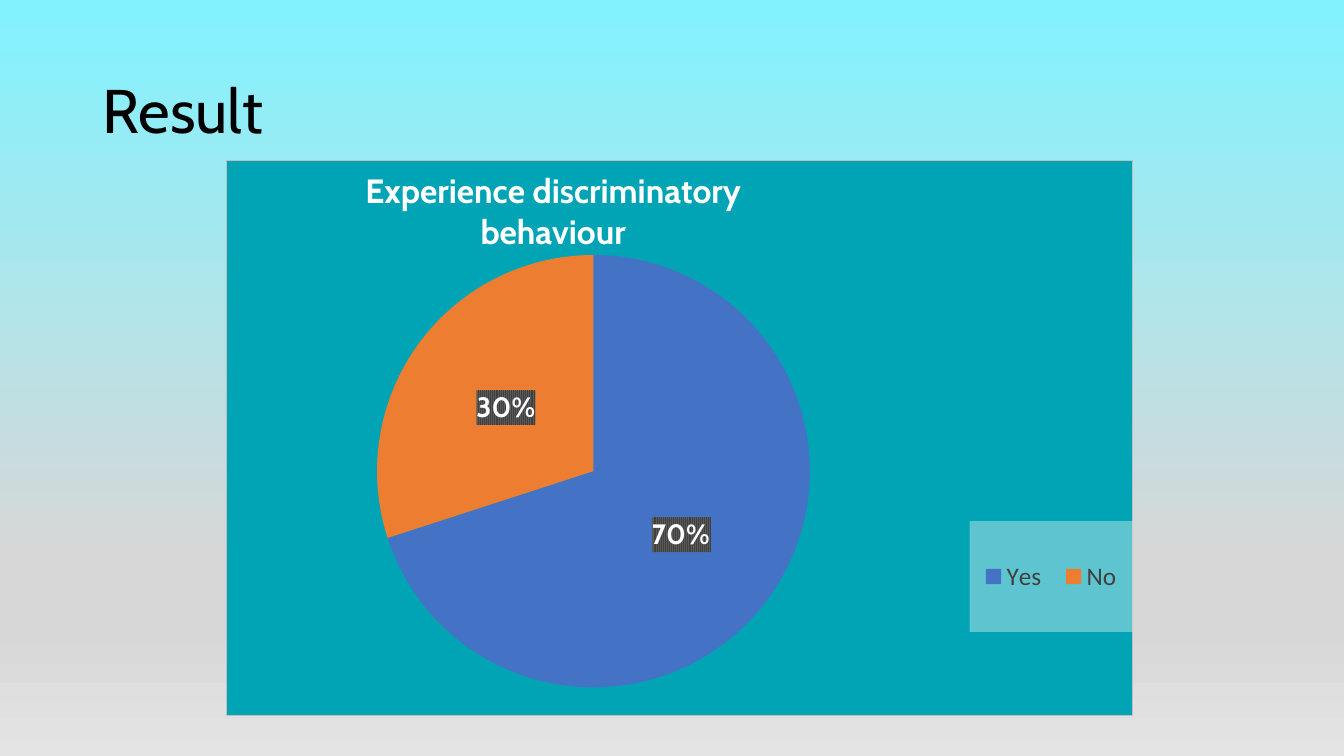
from lxml import etree
from pptx import Presentation
from pptx.chart.data import CategoryChartData
from pptx.dml.color import RGBColor
from pptx.enum import chart as kinds, dml, text
from pptx.oxml import parse_xml
from pptx.oxml.ns import nsdecls, qn
from pptx.util import Inches, Pt

# Content
HEADING = "Result"
CHART_TITLE = ["Experience discriminatory", "behaviour"]
ANSWERS = {"Yes": 70, "No": 30}

THEME = {
    "background": [(0, "81F3FF"), (74, "D7D7D7"), (83, "D7D7D7"), (100, "E4E4E4")],
    "slices": ["4472C4", "ED7D31"],
    "panel": "00A4B5", "border": "BFBFBF",
    "black": "000000", "white": "FFFFFF", "legend": "404040",
    "label_stripes": ("404040", "595959"),
    "display": "Cabin", "body": "Calibri",
    "heading_size": 44, "title_size": 24, "label_size": 20, "legend_size": 18, "base_size": 10,
}

# Places in inches; chart parts as fractions of the chart
HEADING_BOX = (0.92, 0.4, 11.5, 1.45)
CHART_BOX = (2.24, 1.59, 9, 5.51)
TITLE_AT = {"x": 0.15, "y": 0.01}
PLOT_AT = {"x": 0.01, "y": 0.17, "w": 0.79, "h": 0.78}
LEGEND_AT = {"x": 0.82, "y": 0.65, "w": 0.18, "h": 0.2}


def style(font, face, size, color, bold=False):
    font.name, font.size, font.bold = face, Pt(size), bold
    font.color.rgb = RGBColor.from_string(THEME[color])


def set_layout(parent, after, place, inner=False):
    """Give a chart part a manual place, following its child named by after."""
    for old in parent.findall(qn("c:layout")):
        parent.remove(old)
    target = '<c:layoutTarget val="inner"/>' if inner else ""
    modes = "".join(f'<c:{k}Mode val="edge"/>' for k in "xy")
    sizes = "".join(f'<c:{k} val="{v}"/>' for k, v in place.items())
    layout = parse_xml(f'<c:layout {nsdecls("c")}><c:manualLayout>{target}{modes}{sizes}'
                       '</c:manualLayout></c:layout>')
    parent.insert(parent.index(parent.find(qn(after))) + 1 if after else 0, layout)


def add_shape_style(parent, after, content):
    part = parse_xml(f'<c:spPr {nsdecls("c", "a")}>{content}</c:spPr>')
    parent.find(qn(after)).addnext(part)


def solid(color, extra=""):
    return f'<a:solidFill><a:srgbClr val="{color}">{extra}</a:srgbClr></a:solidFill>'


def paint_background(slide):
    fill = slide.background.fill
    fill.gradient()
    fill.gradient_angle = 270
    stops = slide.background._cSld.find(".//" + qn("a:gsLst"))
    for stop in list(stops):
        stops.remove(stop)
    for position, color in THEME["background"]:
        stop = etree.SubElement(stops, qn("a:gs"), pos=str(position * 1000))
        etree.SubElement(stop, qn("a:srgbClr"), val=color)


def add_heading(slide):
    frame = slide.shapes.add_textbox(*map(Inches, HEADING_BOX)).text_frame
    frame.word_wrap = True
    frame.vertical_anchor = text.MSO_ANCHOR.MIDDLE
    frame.text = HEADING
    frame.paragraphs[0].line_spacing = 0.9
    style(frame.paragraphs[0].runs[0].font, THEME["display"], THEME["heading_size"], "black")


def add_pie(slide):
    data = CategoryChartData()
    data.categories = list(ANSWERS)
    data.add_series("Series 1", list(ANSWERS.values()))
    chart = slide.shapes.add_chart(
        kinds.XL_CHART_TYPE.PIE, *map(Inches, CHART_BOX), data).chart
    style(chart.font, THEME["body"], THEME["base_size"], "black")
    add_shape_style(chart._chartSpace, "c:chart",
                    solid(THEME["panel"]) + f'<a:ln w="9525">{solid(THEME["border"])}</a:ln>')

    # Title
    title = chart.chart_title
    title.text_frame.text = "\n".join(CHART_TITLE)
    for line in title.text_frame.paragraphs:
        line.alignment = text.PP_ALIGN.CENTER
        style(line.runs[0].font, THEME["display"], THEME["title_size"], "white", True)
    title.include_in_layout = False
    set_layout(title._element, "c:tx", TITLE_AT)

    # Slices and their percentages
    plot = chart.plots[0]
    plot.vary_by_categories = True
    set_layout(chart._chartSpace.chart.plotArea, None, PLOT_AT, inner=True)
    series = plot.series[0]
    for index, color in enumerate(THEME["slices"]):
        fill = series.points[index].format.fill
        fill.solid()
        fill.fore_color.rgb = RGBColor.from_string(color)
    labels = series.data_labels
    labels.show_percentage, labels.show_value = True, False
    labels.number_format, labels.number_format_is_linked = "0%", False
    labels.position = kinds.XL_LABEL_POSITION.CENTER
    style(labels.font, THEME["display"], THEME["label_size"], "white", True)
    front, back = THEME["label_stripes"]
    add_shape_style(labels._element, "c:numFmt",
                    f'<a:pattFill prst="narVert"><a:fgClr><a:srgbClr val="{front}"/></a:fgClr>'
                    f'<a:bgClr><a:srgbClr val="{back}"/></a:bgClr></a:pattFill>')

    # Legend
    chart.has_legend = True
    legend = chart.legend
    legend.position = kinds.XL_LEGEND_POSITION.RIGHT
    legend.include_in_layout = False
    style(legend.font, THEME["body"], THEME["legend_size"], "legend")
    set_layout(legend._element, "c:legendPos", LEGEND_AT)
    add_shape_style(legend._element, "c:overlay",
                    solid(THEME["white"], '<a:alpha val="37000"/>'))


def main():
    deck = Presentation()
    deck.slide_width, deck.slide_height = Inches(13.33), Inches(7.5)
    slide = deck.slides.add_slide(deck.slide_layouts[6])
    paint_background(slide)
    add_heading(slide)
    add_pie(slide)
    deck.save("out.pptx")


if __name__ == "__main__":
    main()
